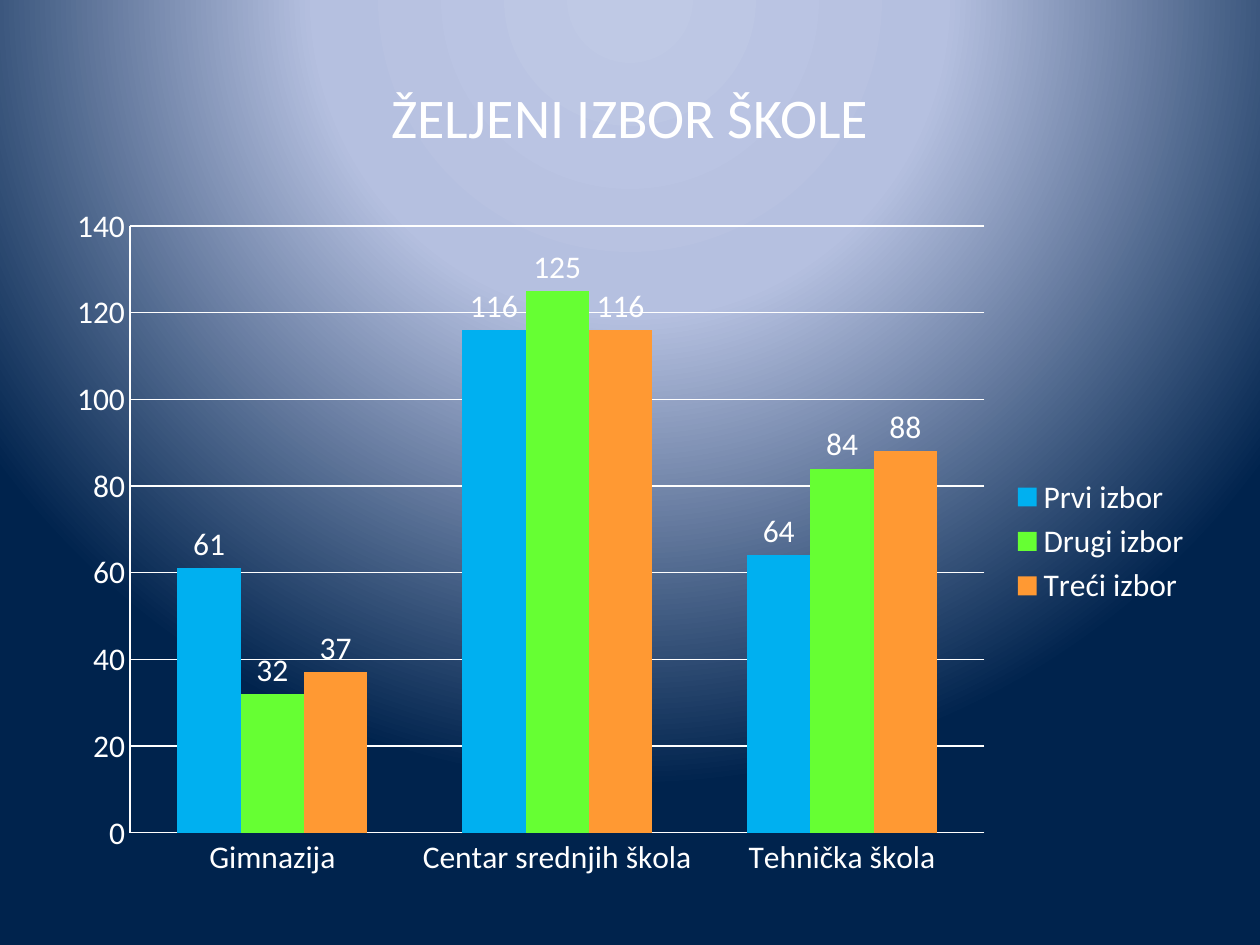
from lxml.etree import SubElement as Sub
from pptx import Presentation
from pptx.chart.data import CategoryChartData as Data
from pptx.dml.color import RGBColor as Rgb
from pptx.enum.chart import XL_CHART_TYPE as Kind, XL_LABEL_POSITION as Spot
from pptx.enum.chart import XL_LEGEND_POSITION as Side, XL_TICK_MARK as Tick
from pptx.enum.text import MSO_ANCHOR as Anchor, PP_ALIGN as Align
from pptx.oxml.ns import qn
from pptx.util import Cm, Pt

HUES = {
    "text": "FFFFFF",
    "glow": "BFC9E5",
    "haze": "B5C0E0",
    "night": "00234D",
    "first": "00B0F0",
    "second": "66FF33",
    "third": "FF9933",
}
FACE = "Calibri"
GROUPS = ["Gimnazija", "Centar srednjih škola", "Tehnička škola"]
PICKS = [
    ("Prvi izbor", (61, 116, 64), "first"),
    ("Drugi izbor", (32, 125, 84), "second"),
    ("Treći izbor", (37, 116, 88), "third"),
]


def hue(name):
    return Rgb.from_string(HUES[name])


def style(font, size):
    font.name = FACE
    font.size = Pt(size)
    font.color.rgb = hue("text")


def rule(line):
    line.color.rgb = hue("text")
    line.width = Pt(0.75)


def add_glow(slide):
    fill = slide.background.fill
    fill.gradient()
    grad = slide.element.find(".//" + qn("a:gradFill"))
    for child in list(grad):
        grad.remove(child)
    stops = Sub(grad, qn("a:gsLst"))
    for pos, name in ((0, "glow"), (40, "haze"), (100, "night")):
        stop = Sub(stops, qn("a:gs"), pos=str(pos * 1000))
        Sub(stop, qn("a:srgbClr"), val=HUES[name])
    ring = Sub(grad, qn("a:path"), path="circle")
    Sub(ring, qn("a:fillToRect"), l="50000", t="-80000", r="50000", b="180000")


def add_title(slide, box, text):
    frame = slide.shapes.add_textbox(*box).text_frame
    frame.word_wrap = True
    frame.vertical_anchor = Anchor.MIDDLE
    para = frame.paragraphs[0]
    para.text = text
    para.alignment = Align.CENTER
    style(para.font, 32)


def add_bars(slide, box):
    data = Data()
    data.categories = GROUPS
    for name, vals, _ in PICKS:
        data.add_series(name, vals)
    chart = slide.shapes.add_chart(Kind.COLUMN_CLUSTERED, *box, data).chart
    style(chart.font, 18)
    chart.has_title = False
    chart.has_legend = True
    chart.legend.position = Side.RIGHT
    chart.legend.include_in_layout = False

    for axis in (chart.category_axis, chart.value_axis):
        axis.major_tick_mark = axis.minor_tick_mark = Tick.NONE
        rule(axis.format.line)
    scale = chart.value_axis
    scale.minimum_scale, scale.maximum_scale, scale.major_unit = 0, 140, 20
    scale.has_major_gridlines = True
    rule(scale.major_gridlines.format.line)

    plot = chart.plots[0]
    plot.vary_by_categories = False
    plot.gap_width, plot.overlap = 150, 0
    for bars, (_, _, name) in zip(plot.series, PICKS):
        bars.format.fill.solid()
        bars.format.fill.fore_color.rgb = hue(name)
        bars.invert_if_negative = False
        labels = bars.data_labels
        labels.show_value = True
        labels.position = Spot.OUTSIDE_END
        style(labels.font, 18)


def main():
    deck = Presentation()
    deck.slide_width, deck.slide_height = Cm(25.4), Cm(19.05)
    slide = deck.slides.add_slide(deck.slide_layouts[6])
    add_glow(slide)
    head = Cm(1.27), Cm(0.76), Cm(22.86), Cm(3.18)
    add_title(slide, head, "ŽELJENI IZBOR ŠKOLE")
    add_bars(slide, (Cm(1.09), Cm(3.89), Cm(23.19), Cm(14.05)))
    deck.save("out.pptx")


if __name__ == "__main__":
    main()
